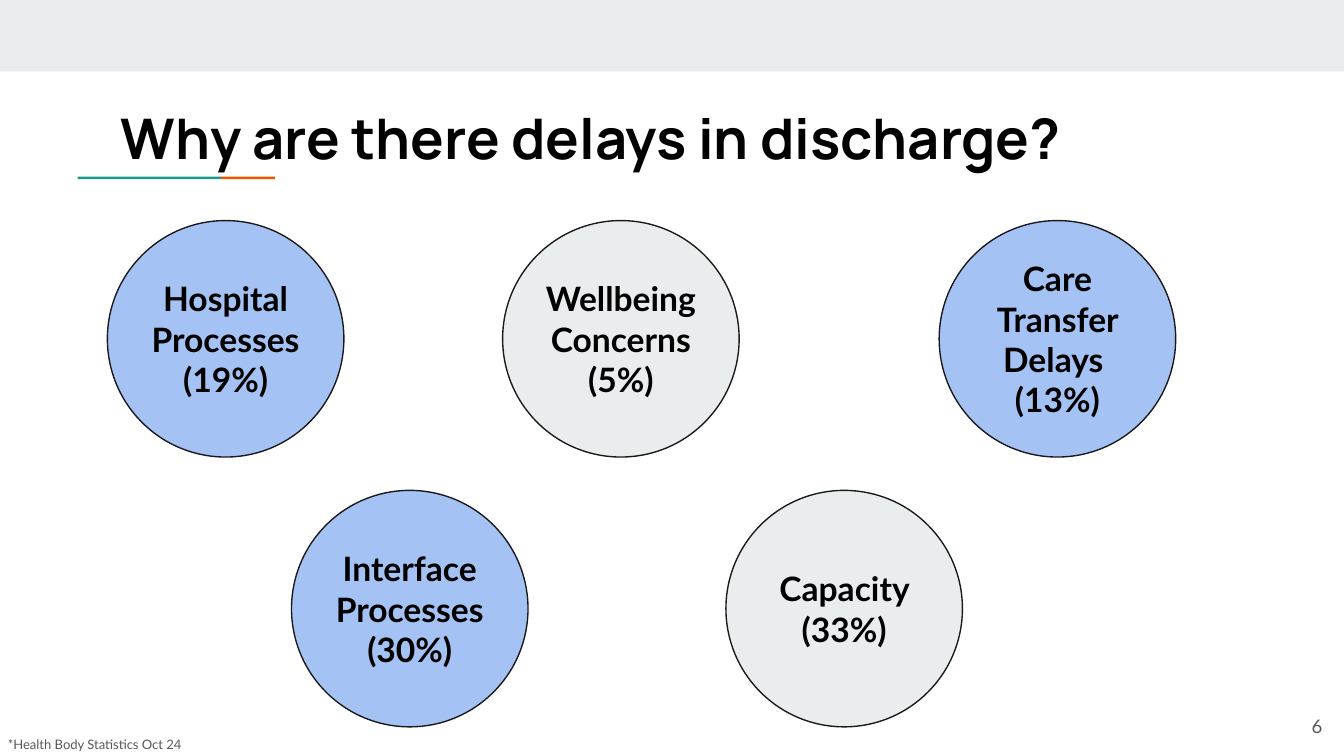
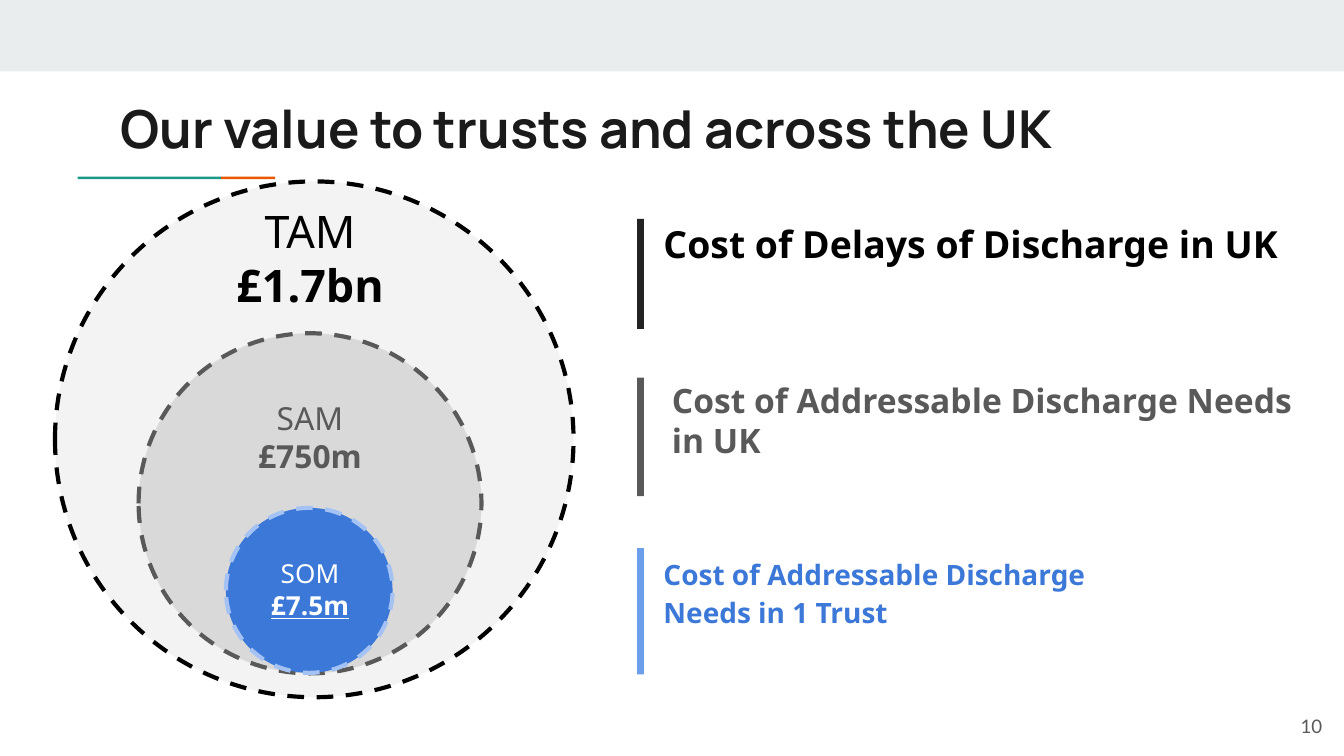
from pptx import Presentation
from pptx.dml.color import RGBColor
from pptx.enum.dml import MSO_LINE_DASH_STYLE as Dash
from pptx.enum.shapes import MSO_SHAPE as Shape
from pptx.enum.text import MSO_ANCHOR as Anchor, PP_ALIGN as Align
from pptx.util import Cm, Pt

BLACK = RGBColor(0x00, 0x00, 0x00)
WHITE = RGBColor(0xFF, 0xFF, 0xFF)
INK = RGBColor(0x1A, 0x1A, 0x1A)
CHARCOAL = RGBColor(0x23, 0x23, 0x23)
GREY = RGBColor(0x59, 0x59, 0x59)
MID_GREY = RGBColor(0xD9, 0xD9, 0xD9)
PALE_GREY = RGBColor(0xF3, 0xF3, 0xF3)
BAND = RGBColor(0xE9, 0xED, 0xEE)
TEAL = RGBColor(0x1A, 0x99, 0x88)
ORANGE = RGBColor(0xEB, 0x56, 0x00)
BLUE = RGBColor(0x3C, 0x78, 0xD8)
SKY = RGBColor(0x6D, 0x9E, 0xEB)
LIGHT_BLUE = RGBColor(0xA4, 0xC2, 0xF4)

HEADING, BODY, MARKET = "Manrope", "Lato", "Noto Sans"

# Content: reasons as (paragraphs, left, fill), one list per row
REASON_SIZE = 4.47
REASON_ROWS = [
    (4.17, [
        (["Hospital Processes (19%)"], 2.03, LIGHT_BLUE),
        (["Wellbeing Concerns (5%)"], 9.5, BAND),
        (["Care Transfer Delays ", "(13%)"], 17.75, LIGHT_BLUE),
    ]),
    (9.27, [
        (["Interface Processes (30%)"], 5.51, LIGHT_BLUE),
        (["Capacity (33%)"], 13.72, BAND),
    ]),
]
FOOTNOTE = "*Health Body Statistics Oct 24"

# Content: nested markets, outermost first; boxes are left, top, width, height
MARKETS = [
    dict(name="TAM", value="£1.7bn", size=24, color=BLACK, label_top=3.61,
         circle=(1.04, 3.43, 9.8, 9.75), fill=PALE_GREY, line=BLACK,
         bar=(4.14, 2.08), bar_fill=CHARCOAL,
         note="Cost of Delays of Discharge in UK",
         note_box=(12.29, 3.81, 12.8, 2.39), note_size=20, note_color=BLACK,
         spacing=1.15),
    dict(name="SAM", value="£750m", size=17, color=GREY, label_top=7.29,
         circle=(2.62, 6.3, 6.48, 6.43), fill=MID_GREY, line=GREY,
         bar=(7.14, 2.24), bar_fill=GREY,
         note="Cost of Addressable Discharge Needs in UK",
         note_box=(12.45, 6.93, 12.5, 2.39), note_size=18, note_color=GREY,
         spacing=None),
    dict(name="SOM", value="£7.5m", size=14, color=WHITE, label_top=10.29,
         circle=(4.27, 9.6, 3.15, 3.12), fill=BLUE, line=LIGHT_BLUE,
         bar=(10.36, 2.39), bar_fill=SKY,
         note="Cost of Addressable Discharge Needs in 1 Trust",
         note_box=(12.29, 10.19, 10.01, 2.39), note_size=15, note_color=BLUE,
         spacing=1.15, underline=True),
]


def write(sp, lines, font=BODY, size=18, color=BLACK, bold=False, align=Align.LEFT,
          anchor=Anchor.TOP, inset=0.25, spacing=None, before=None):
    """Fill a shape with one paragraph per line and return its text frame."""
    tf = sp.text_frame
    tf.word_wrap = True
    tf.vertical_anchor = anchor
    tf.margin_left = tf.margin_right = Cm(inset)
    tf.margin_top = tf.margin_bottom = Cm(0.25)
    for i, line in enumerate(lines):
        p = tf.add_paragraph() if i else tf.paragraphs[0]
        p.alignment = align
        if spacing:
            p.line_spacing = spacing
        if before:
            p.space_before = Pt(before)
        r = p.add_run()
        r.text = line
        r.font.name, r.font.size, r.font.bold = font, Pt(size), bold
        r.font.color.rgb = color
    return tf


def add_text(s, box, lines, **style):
    return write(s.shapes.add_textbox(*map(Cm, box)), lines, **style)


def add_block(s, kind, box, fill, line=None, width=0.75, dash=None):
    sp = s.shapes.add_shape(kind, *map(Cm, box))
    sp.shadow.inherit = False
    sp.fill.solid()
    sp.fill.fore_color.rgb = fill
    if line is None:
        sp.line.fill.background()
    else:
        sp.line.color.rgb = line
        sp.line.width = Pt(width)
        if dash:
            sp.line.dash_style = dash
    return sp


def add_slide(prs, title, number, top=1.52, **title_style):
    """Start a slide with the shared band, underline, title and page number."""
    s = prs.slides.add_slide(prs.slide_layouts[6])
    add_block(s, Shape.RECTANGLE, (0, 0, 25.4, 1.35), BAND)
    add_block(s, Shape.RECTANGLE, (1.47, 3.34, 2.71, 0.05), TEAL)
    add_block(s, Shape.RECTANGLE, (4.18, 3.34, 1.02, 0.05), ORANGE)
    add_text(s, (2.03, top, 21.36, 1.5), [title], font=HEADING, bold=True, **title_style)
    add_text(s, (23.72, 13.18, 1.52, 1.09), [str(number)], size=10, color=GREY,
             align=Align.RIGHT, anchor=Anchor.MIDDLE)
    return s


def build_reasons(prs):
    s = add_slide(prs, "Why are there delays in discharge?", 6,
                  size=30, spacing=1.15, before=14)
    for top, reasons in REASON_ROWS:
        for lines, left, fill in reasons:
            sp = add_block(s, Shape.OVAL, (left, top, REASON_SIZE, REASON_SIZE), fill, INK)
            write(sp, lines, bold=True, align=Align.CENTER, anchor=Anchor.MIDDLE, inset=0)
    add_text(s, (-0.1, 13.7, 6.86, 0.56), [FOOTNOTE], size=7, color=GREY, spacing=1.15)


def build_markets(prs):
    s = add_slide(prs, "Our value to trusts and across the UK", 10,
                  top=1.57, size=28, color=INK)
    for m in MARKETS:
        # Nested circle with its label
        add_block(s, Shape.OVAL, m["circle"], m["fill"], m["line"], 2.25, Dash.DASH)
        tf = add_text(s, (3.94, m["label_top"], 3.84, 2), [m["name"], m["value"]],
                      font=MARKET, size=m["size"], color=m["color"], align=Align.CENTER)
        value = tf.paragraphs[1].runs[0].font
        value.bold = True
        value.underline = m.get("underline")
        # Bar and explanation on the right
        bar_top, bar_height = m["bar"]
        add_block(s, Shape.RECTANGLE, (12.04, bar_top, 0.13, bar_height), m["bar_fill"])
        add_text(s, m["note_box"], [m["note"]], font=MARKET, size=m["note_size"],
                 color=m["note_color"], bold=True, spacing=m["spacing"])


def main():
    prs = Presentation()
    prs.slide_width, prs.slide_height = Cm(25.4), Cm(14.29)
    build_reasons(prs)
    build_markets(prs)
    prs.save("out.pptx")


if __name__ == "__main__":
    main()
